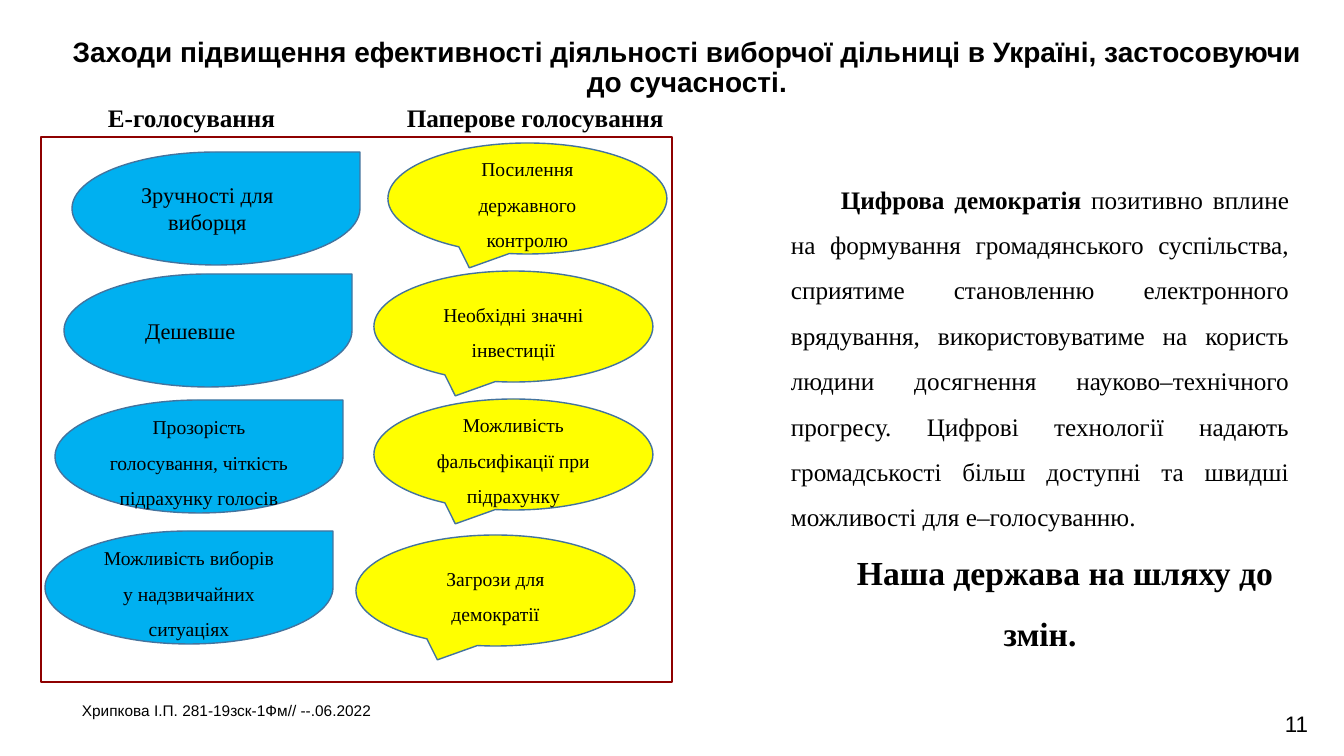
from pptx import Presentation
from pptx import util as u
from pptx.dml.color import RGBColor
from pptx.enum import shapes, text

EMU_PER_PX = 914400 / 100.8
BLACK = RGBColor(0x00, 0x00, 0x00)
BLUE = RGBColor(0x00, 0xB0, 0xF0)
YELLOW = RGBColor(0xFF, 0xFF, 0x00)
OUTLINE = RGBColor(0x43, 0x73, 0x9E)
DARK_RED = RGBColor(0x8E, 0x00, 0x00)
SANS = "Arial"
SERIF = "Times New Roman"
LEFT, CENTER, JUSTIFY = text.PP_ALIGN.LEFT, text.PP_ALIGN.CENTER, text.PP_ALIGN.JUSTIFY
TEARDROP = shapes.MSO_SHAPE.TEAR
CALLOUT = shapes.MSO_SHAPE.OVAL_CALLOUT

TEARDROP_SIZE = (288, 113)
CALLOUT_SIZE = (279, 111)

SHORT_BENEFITS = [
    (72, 152, [("Зручності для", 17), ("виборця", 44)]),
    (64, 274, [("Дешевше", 29)]),
]
LONG_BENEFITS = [
    (55, 400, "Прозорість голосування, чіткість підрахунку голосів"),
    (45, 531, "Можливість виборів у надзвичайних ситуаціях"),
]
PAPER_POINTS = [
    (388, 143, "Посилення державного контролю"),
    (374, 271, "Необхідні значні інвестиції"),
    (374, 399, "Можливість фальсифікації при підрахунку"),
    (356, 535, "Загрози для демократії"),
]
DEMOCRACY = (
    " позитивно вплине на формування громадянського суспільства, сприятиме "
    "становленню електронного врядування, використовуватиме на користь людини "
    "досягнення науково–технічного прогресу. Цифрові технології надають "
    "громадськості більш доступні та швидші можливості для е–голосуванню."
)


def px(*lengths):
    return [u.Emu(round(n * EMU_PER_PX)) for n in lengths]


def format_paragraph(p, size, font=SERIF, bold=False, align=LEFT, spacing=1.0):
    p.alignment = align
    p.line_spacing = spacing
    for r in p.runs:
        r.font.name = font
        r.font.size = u.Pt(size)
        r.font.bold = bold
        r.font.color.rgb = BLACK


def set_indent(p, margin=0, first_line=0):
    margin, first_line = px(margin, first_line)
    pPr = p._p.get_or_add_pPr()
    pPr.set("marL", str(margin))
    pPr.set("indent", str(first_line))


def add_text(s, box, content, size, wrap=True, **style):
    tf = s.shapes.add_textbox(*px(*box)).text_frame
    tf.word_wrap = wrap
    tf.text = content
    format_paragraph(tf.paragraphs[0], size, **style)
    return tf


def add_figure(s, kind, box, line, fill=None):
    sp = s.shapes.add_shape(kind, *px(*box))
    sp.shadow.inherit = False
    if fill is None:
        sp.fill.background()
    else:
        sp.fill.solid()
        sp.fill.fore_color.rgb = fill
    sp.line.color.rgb = line
    sp.line.width = u.Pt(1)
    return sp


def add_centered_figure(s, kind, box, fill, content):
    tf = add_figure(s, kind, box, OUTLINE, fill).text_frame
    tf.text = content
    format_paragraph(tf.paragraphs[0], 14, align=CENTER, spacing=1.5)


def add_indented_figure(s, kind, box, fill, lines):
    tf = add_figure(s, kind, box, OUTLINE, fill).text_frame
    tf.text = "\n".join(content for content, _ in lines)
    for p, (_, margin) in zip(tf.paragraphs, lines):
        set_indent(p, margin)
        format_paragraph(p, 16)


def add_conclusion(s):
    tf = add_text(s, (781, 164, 518, 499), "Цифрова демократія", 18,
                  align=JUSTIFY, spacing=1.5)
    p = tf.paragraphs[0]
    p.add_run().text = DEMOCRACY
    format_paragraph(p, 18, align=JUSTIFY, spacing=1.5)
    p.runs[0].font.bold = True
    slogan = tf.add_paragraph()
    slogan.text = "Наша держава на шляху до змін."
    format_paragraph(slogan, 24, bold=True, align=CENTER, spacing=1.5)
    for p in tf.paragraphs:
        set_indent(p, first_line=50)


def main():
    prs = Presentation()
    prs.slide_width, prs.slide_height = px(1344, 756)
    s = prs.slides.add_slide(prs.slide_layouts[6])

    add_text(s, (1264, 705, 65, 37), "11", 16, font=SANS, align=CENTER)
    add_text(s, (55, 33, 1264, 80),
             "Заходи підвищення ефективності діяльності виборчої дільниці "
             "в Україні, застосовуючи до сучасності.",
             20, font=SANS, bold=True, align=CENTER, spacing=0.9)
    add_text(s, (72, 698, 1098, 26), "Хрипкова І.П. 281-19зск-1Фм// --.06.2022",
             11, font=SANS, spacing=0.9)
    add_conclusion(s)

    for x, y, lines in SHORT_BENEFITS:
        add_indented_figure(s, TEARDROP, (x, y, *TEARDROP_SIZE), BLUE, lines)
    for x, y, content in LONG_BENEFITS:
        add_centered_figure(s, TEARDROP, (x, y, *TEARDROP_SIZE), BLUE, content)
    for x, y, content in PAPER_POINTS:
        add_centered_figure(s, CALLOUT, (x, y, *CALLOUT_SIZE), YELLOW, content)

    add_text(s, (98, 97, 190, 40), "Е-голосування", 18, wrap=False, bold=True)
    add_text(s, (397, 97, 280, 40), "Паперове голосування", 18, wrap=False, bold=True)
    add_figure(s, shapes.MSO_SHAPE.RECTANGLE, (41, 137, 631, 545), DARK_RED)
    prs.save("out.pptx")


if __name__ == "__main__":
    main()
